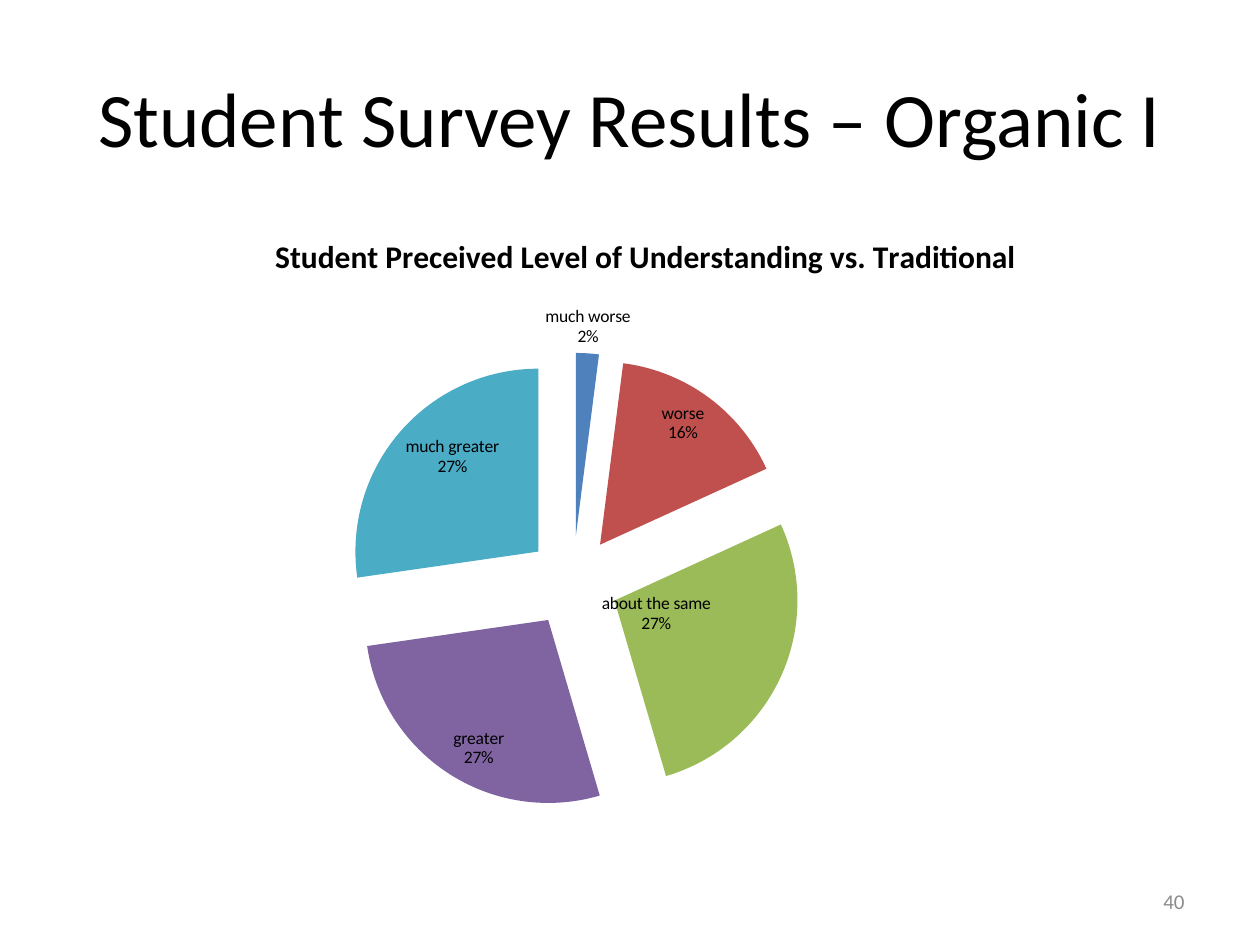
import pptx
import pptx.util
import pptx.dml.color
import pptx.enum.text
import pptx.enum.chart
import pptx.chart.data
import pptx.oxml
import pptx.oxml.ns

Pt = pptx.util.Pt
RGB = pptx.dml.color.RGBColor
ALIGN = pptx.enum.text.PP_ALIGN
SPOT = pptx.enum.chart.XL_LABEL_POSITION
qn = pptx.oxml.ns.qn

FONT = "Calibri"
BLACK = RGB(0x00, 0x00, 0x00)
GRAY = RGB(0x8C, 0x8C, 0x8C)
BLUE = RGB(0x4F, 0x81, 0xBD)
RED = RGB(0xC0, 0x50, 0x4D)
GREEN = RGB(0x9B, 0xBB, 0x59)
PURPLE = RGB(0x80, 0x64, 0xA2)
TEAL = RGB(0x4B, 0xAC, 0xC6)

# text, box (left, top, width, height), size, colour, alignment
TEXTS = [
    ("Student Survey Results – Organic I", (36, 21.6, 648, 90), 44, BLACK, ALIGN.CENTER),
    ("40", (516, 500.5, 168, 28.75), 12, GRAY, ALIGN.RIGHT),
]
HEAD = "Student Preceived Level of Understanding vs. Traditional"
CHART = (72, 120, 594, 354)
PLOT = {"x": 0.21, "y": 0.23, "w": 0.44, "h": 0.74}
EXPLODE = 25
# answer, percent, colour, label position, label shift (share of the chart)
SLICES = [
    ("much worse", 2, BLUE, SPOT.OUTSIDE_END, None),
    ("worse", 16, RED, SPOT.INSIDE_END, None),
    ("about the same", 27, GREEN, SPOT.CENTER, {"x": -0.04, "y": -0.04}),
    ("greater", 27, PURPLE, SPOT.INSIDE_END, None),
    ("much greater", 27, TEAL, SPOT.INSIDE_END, None),
]


def node(tag, val=None):
    item = pptx.oxml.parse_xml(f"<c:{tag} {pptx.oxml.ns.nsdecls('c')}/>")
    if val is not None:
        item.set("val", str(val))
    return item


def layout(places, **modes):
    """Return a manual layout for a plot area or a label."""
    outer, inner = node("layout"), node("manualLayout")
    outer.append(inner)
    for tag, val in {**modes, **places}.items():
        inner.append(node(tag, val))
    return outer


def style(font, size, color, bold=False):
    font.name, font.size, font.bold = FONT, Pt(size), bold
    font.color.rgb = color


def write(slide, text, box, size, color, align):
    frame = slide.shapes.add_textbox(*map(Pt, box)).text_frame
    frame.word_wrap = True
    frame.vertical_anchor = pptx.enum.text.MSO_ANCHOR.MIDDLE
    para = frame.paragraphs[0]
    para.alignment = align
    run = para.add_run()
    run.text = text
    style(run.font, size, color)


def label(point, spot, shift):
    """Show answer and percent on two lines beside the slice."""
    tag = point.data_label
    tag.position = spot
    item = tag._dLbl
    for name, val in (("showVal", 0), ("showCatName", 1), ("showPercent", 1)):
        item.find(qn(f"c:{name}")).set("val", str(val))
    line = node("separator")
    line.text = "\n"
    item.append(line)
    if shift:
        item.find(qn("c:idx")).addnext(layout(shift))


def draw_pie(slide):
    data = pptx.chart.data.CategoryChartData()
    data.categories = [row[0] for row in SLICES]
    data.add_series("Series 1", [row[1] for row in SLICES])
    kind = pptx.enum.chart.XL_CHART_TYPE.PIE
    chart = slide.shapes.add_chart(kind, *map(Pt, CHART), data).chart
    style(chart.font, 10, BLACK)
    chart.has_legend = False
    chart.has_title = True
    run = chart.chart_title.text_frame.paragraphs[0].add_run()
    run.text = HEAD
    style(run.font, 18, BLACK, True)

    plot = chart.plots[0]
    plot.vary_by_categories = True
    area = chart._chartSpace.chart.plotArea
    for old in area.findall(qn("c:layout")):
        area.remove(old)
    area.insert(0, layout(PLOT, layoutTarget="inner", xMode="edge", yMode="edge"))

    series = plot.series[0]
    series._element.find(qn("c:tx")).addnext(node("explosion", EXPLODE))
    for num, (_, _, color, spot, shift) in enumerate(SLICES):
        point = series.points[num]
        point.format.fill.solid()
        point.format.fill.fore_color.rgb = color
        label(point, spot, shift)


def main():
    deck = pptx.Presentation()
    deck.slide_width, deck.slide_height = Pt(720), Pt(540)
    slide = deck.slides.add_slide(deck.slide_layouts[6])
    draw_pie(slide)
    for row in TEXTS:
        write(slide, *row)
    deck.save("out.pptx")


if __name__ == "__main__":
    main()
